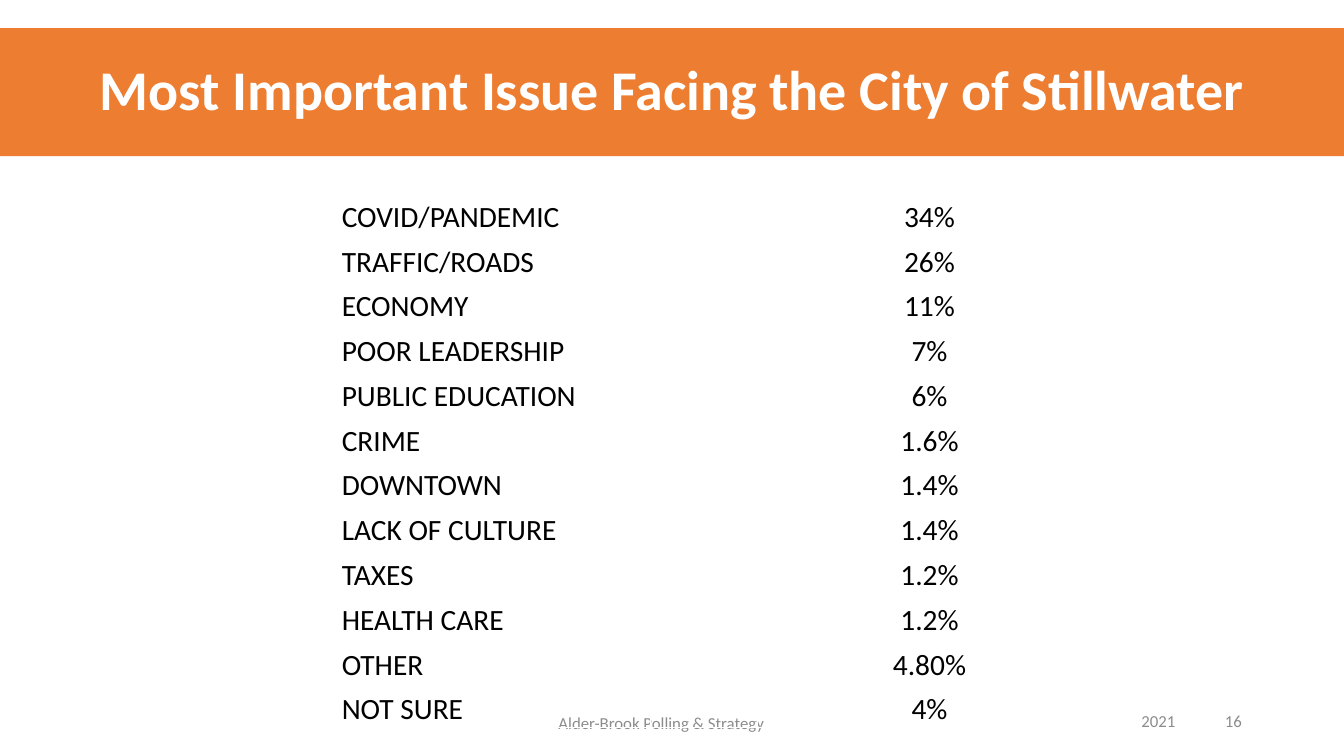
from lxml import etree
from pptx import Presentation
from pptx.dml.color import RGBColor
from pptx.enum.text import MSO_ANCHOR, MSO_AUTO_SIZE, PP_ALIGN
from pptx.oxml.ns import qn
from pptx.util import Inches, Pt

ORANGE = RGBColor(0xED, 0x7D, 0x31)
WHITE = RGBColor(0xFF, 0xFF, 0xFF)
BLACK = RGBColor(0, 0, 0)
GRAY = RGBColor(0x8C, 0x8C, 0x8C)
LEFT, CENTER = PP_ALIGN.LEFT, PP_ALIGN.CENTER
MIDDLE, BOTTOM = MSO_ANCHOR.MIDDLE, MSO_ANCHOR.BOTTOM
TITLE_ONLY = 5

# Issue, share of answers, whether the label spans two columns
ISSUES = [
    ("COVID/PANDEMIC", "34%", True),
    ("TRAFFIC/ROADS", "26%", True),
    ("ECONOMY", "11%", False),
    ("POOR LEADERSHIP", "7%", True),
    ("PUBLIC EDUCATION", "6%", True),
    ("CRIME", "1.6%", False),
    ("DOWNTOWN", "1.4%", True),
    ("LACK OF CULTURE", "1.4%", True),
    ("TAXES", "1.2%", False),
    ("HEALTH CARE", "1.2%", True),
    ("OTHER", "4.80%", False),
    ("NOT SURE", "4%", False),
]
COLUMN_WIDTHS = [3.14, 1.06, 0.92, 1.58]
ROW_HEIGHT = 5.33 / len(ISSUES)


def write(frame, text, size=12, color=GRAY, bold=False, align=LEFT, space_after=0):
    paragraph = frame.paragraphs[0]
    paragraph.alignment = align
    paragraph.space_after = Pt(space_after)
    run = paragraph.add_run()
    run.text = text
    run.font.name = "Calibri"
    run.font.size = Pt(size)
    run.font.bold = bold
    run.font.color.rgb = color
    return paragraph


def add_borders(cell):
    """Give all four edges of a table cell a 1 pt white line."""
    properties = cell._tc.get_or_add_tcPr()
    for position, edge in enumerate(("lnL", "lnR", "lnT", "lnB")):
        line = etree.Element(qn(f"a:{edge}"), w=str(Pt(1)))
        fill = etree.SubElement(line, qn("a:solidFill"))
        etree.SubElement(fill, qn("a:srgbClr"), val=str(WHITE))
        properties.insert(position, line)


presentation = Presentation()
presentation.slide_width = Inches(13.33)
presentation.slide_height = Inches(7.5)
slide = presentation.slides.add_slide(presentation.slide_layouts[TITLE_ONLY])

# Title band
title = slide.shapes.title
title.left, title.top = Inches(0), Inches(0.28)
title.width, title.height = Inches(13.33), Inches(1.27)
title.fill.solid()
title.fill.fore_color.rgb = ORANGE
title.text_frame.auto_size = MSO_AUTO_SIZE.NONE
title.text_frame.vertical_anchor = MIDDLE
heading = write(title.text_frame, "Most Important Issue Facing the City of Stillwater",
                size=40, color=WHITE, bold=True, align=CENTER)
heading.line_spacing = 0.9

# Footer: year and page number sit on right-aligned tab stops
page_box = slide.shapes.add_textbox(Inches(9.42), Inches(6.95), Inches(3), Inches(0.4))
footer_box = slide.shapes.add_textbox(Inches(4.31), Inches(6.95), Inches(4.5), Inches(0.45))
for box in (page_box, footer_box):
    box.text_frame.word_wrap = True
    box.text_frame.vertical_anchor = MIDDLE
page_line = write(page_box.text_frame, "\t2021\t16", space_after=6)
write(footer_box.text_frame, "Alder-Brook Polling & Strategy", align=CENTER, space_after=6)
tab_list = etree.SubElement(page_line._p.get_or_add_pPr(), qn("a:tabLst"))
for stop in (2.14, 2.8):
    etree.SubElement(tab_list, qn("a:tab"), pos=str(Inches(stop)), algn="r")

# Issue table
table = slide.shapes.add_table(len(ISSUES), len(COLUMN_WIDTHS), Inches(3.31), Inches(1.89),
                               Inches(sum(COLUMN_WIDTHS)), Inches(5.33)).table
table.first_row = False
table.horz_banding = False
for column, width in zip(table.columns, COLUMN_WIDTHS):
    column.width = Inches(width)

for row, (issue, share, spans_two) in enumerate(ISSUES):
    table.rows[row].height = Inches(ROW_HEIGHT)
    for column in range(len(COLUMN_WIDTHS)):
        cell = table.cell(row, column)
        cell.fill.background()
        add_borders(cell)
    if spans_two:
        table.cell(row, 0).merge(table.cell(row, 1))
    for column, text, align, indent in ((0, issue, LEFT, 0.08), (3, share, CENTER, 0.02)):
        cell = table.cell(row, column)
        cell.vertical_anchor = BOTTOM
        cell.margin_left = Inches(indent)
        cell.margin_right = cell.margin_top = Inches(0.02)
        cell.margin_bottom = 0
        write(cell.text_frame, text, size=21, color=BLACK, align=align)

presentation.save("out.pptx")
